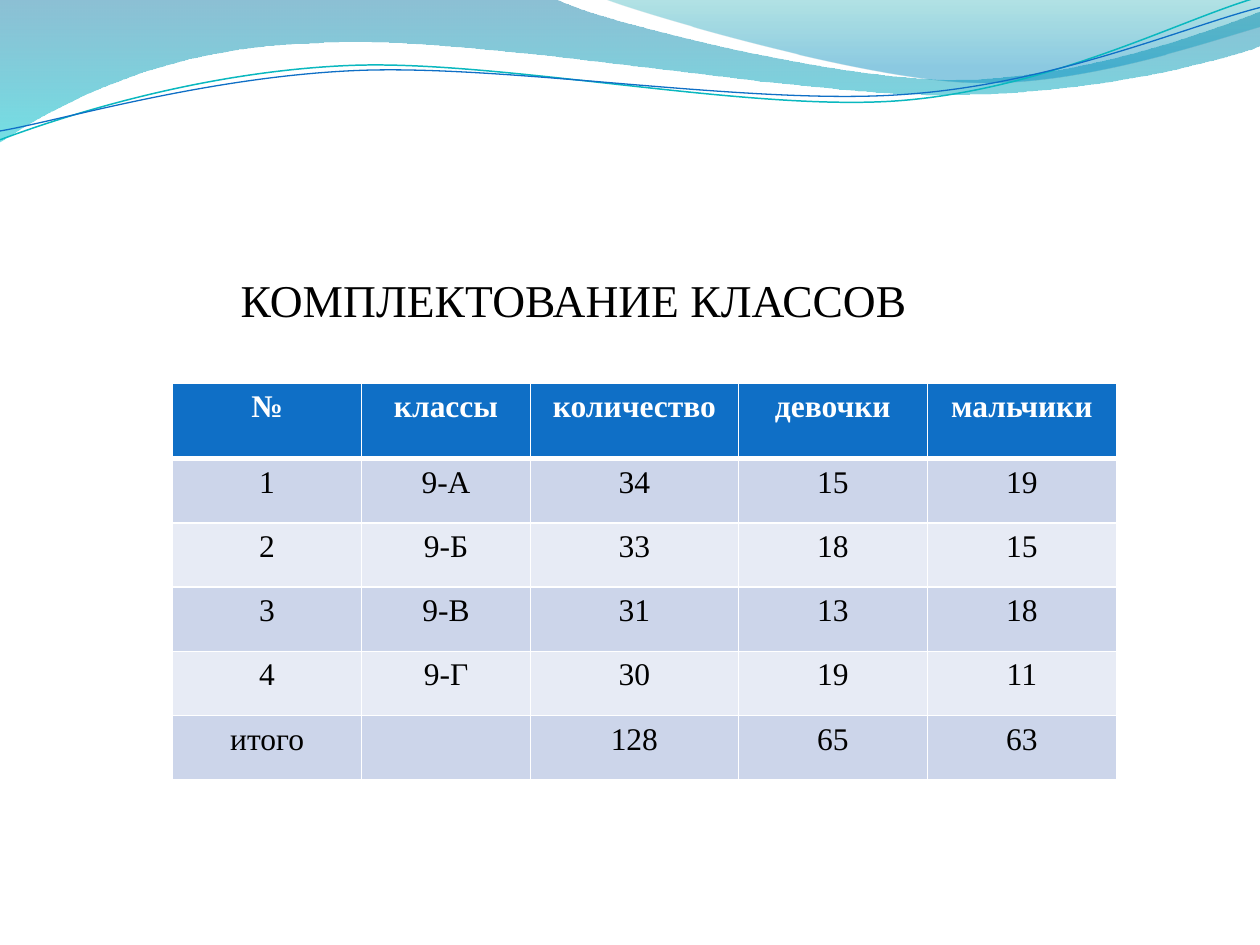
import math

from lxml import etree
from pptx import Presentation
from pptx import util as u
from pptx.dml.color import RGBColor
from pptx.enum import text
from pptx.oxml.ns import qn

COLORS = {
    "white": "FFFFFF", "black": "000000", "blue": "0F6FC6", "teal": "0AB8BF",
    "band_dark": "CCD5EA", "band_light": "E7EBF5",
    "wave_top": "0074A1", "wave_bottom": "00C6CF",
    "crest_top": "00A1A9", "crest_bottom": "008BBF",
}
FONT = "Times New Roman"

presentation = Presentation()
presentation.slide_width, presentation.slide_height = u.Inches(10), u.Inches(7.5)
slide = presentation.slides.add_slide(presentation.slide_layouts[5])


def add_wave(start, segments, closed, tilt=0, center=(0, 0)):
    """Draw an outline; a segment is a line end (2 numbers) or a cubic curve (6)."""
    cos, sin = math.cos(math.radians(tilt)), math.sin(math.radians(tilt))
    outline = []
    for segment in [start, *segments]:
        points = []
        for x, y in zip(segment[::2], segment[1::2]):
            dx, dy = x - center[0], y - center[1]
            points.append((u.Inches(center[0] + dx * cos + dy * sin),
                           u.Inches(center[1] - dx * sin + dy * cos)))
        outline.append(points)
    builder = slide.shapes.build_freeform(*outline[0][0])
    builder.add_line_segments([points[-1] for points in outline[1:]], close=closed)
    shape = builder.convert_to_shape()
    shape.shadow.inherit = False
    # Turn the straight segments that have control points into curves
    for line, points in zip(list(shape.element.iter(qn("a:lnTo"))), outline[1:]):
        if len(points) == 3:
            curve = etree.Element(qn("a:cubicBezTo"))
            for x, y in points:
                etree.SubElement(curve, qn("a:pt"),
                                 x=str(x - shape.left), y=str(y - shape.top))
            line.getparent().replace(line, curve)
    shape.rotation = tilt
    return shape


def add_run(paragraph, content, size, color, bold=False):
    run = paragraph.add_run()
    run.text = content
    run.font.name, run.font.size, run.font.bold = FONT, u.Pt(size), bold
    run.font.color.rgb = RGBColor.from_string(COLORS[color])


# Translucent waves: start, segments, gradient stops (position, colour, opacity %)
filled_waves = [
    ((0, 0),
     [(4.4, -0.01), (4.76, 0.17, 6.64, 0.63, 7.58, 0.63),
      (8.53, 0.63, 9.58, 0.26, 10, 0.09), (10.01, 0.36),
      (9.83, 0.44, 8.7, 0.76, 7.46, 0.75), (6.22, 0.75, 3.82, 0.28, 2.57, 0.34),
      (1.29, 0.36, 0.46, 0.83, -0.01, 1.13), (0, 0)],
     [(0, "wave_top", 45), (1, "wave_bottom", 55)]),
    ((4.79, -0.01),
     [(5.09, 0.11, 6.82, 0.62, 7.69, 0.65), (8.56, 0.69, 9.61, 0.32, 10, 0.21),
      (10, 0), (4.79, -0.01)],
     [(0, "crest_top", 30), (0.8, "crest_bottom", 45)]),
]
for start, segments, stops in filled_waves:
    shape = add_wave(start, segments, True)
    shape.line.fill.background()
    shape.fill.gradient()
    shape.fill.gradient_angle = 270
    for stop, (position, color, _) in zip(shape.fill.gradient_stops, stops):
        stop.position = position
        stop.color.rgb = RGBColor.from_string(COLORS[color])
    for node, (_, _, opacity) in zip(shape.element.spPr.iter(qn("a:srgbClr")), stops):
        etree.SubElement(node, qn("a:alpha"), val=str(opacity * 1000))

# Thin tilted wave lines
wave_lines = [
    ((0, 1.11),
     [(0.48, 0.93, 1.58, 0.57, 2.77, 0.52), (3.95, 0.47, 5.93, 0.89, 7.13, 0.8),
      (8.33, 0.71, 9.38, 0.15, 9.98, -0.02)], (4.99, 0.57), "teal", 0.85),
    ((0, 1.04),
     [(0.47, 0.96, 1.64, 0.61, 2.83, 0.56), (4.03, 0.51, 5.97, 0.84, 7.17, 0.75),
      (8.36, 0.67, 9.41, 0.21, 10, 0.06)], (5, 0.59), "blue", 0.75),
]
for start, segments, center, color, width in wave_lines:
    shape = add_wave(start, segments, False, -2.7, center)
    shape.fill.background()
    shape.line.color.rgb = RGBColor.from_string(COLORS[color])
    shape.line.width = u.Pt(width)

# Title
title = slide.shapes.title
title.left, title.top = u.Inches(0.5), u.Inches(2.12)
title.width, title.height = u.Inches(9), u.Inches(4.8)
frame = title.text_frame
frame.word_wrap = True
frame.auto_size = text.MSO_AUTO_SIZE.NONE
frame.vertical_anchor = text.MSO_ANCHOR.TOP
frame.margin_left, frame.margin_top = u.Inches(1.41), u.Inches(0.04)
frame.paragraphs[0].alignment = text.PP_ALIGN.LEFT
add_run(frame.paragraphs[0], "КОМПЛЕКТОВАНИЕ КЛАССОВ", 26, "black")

# Class table
rows = [
    ["№", "классы", "количество", "девочки", "мальчики"],
    ["1", "9-А", "34", "15", "19"],
    ["2", "9-Б", "33", "18", "15"],
    ["3", "9-В", "31", "13", "18"],
    ["4", "9-Г", "30", "19", "11"],
    ["итого", "", "128", "65", "63"],
]
column_widths = [1.5, 1.34, 1.65, 1.5, 1.5]
table = slide.shapes.add_table(
    len(rows), len(column_widths),
    u.Inches(1.37), u.Inches(3.04), u.Inches(7.48), u.Inches(3.15)).table
for column, width in zip(table.columns, column_widths):
    column.width = u.Inches(width)

for row_index, values in enumerate(rows):
    header = row_index == 0
    table.rows[row_index].height = u.Inches(0.6 if header else 0.51)
    band = "blue" if header else "band_dark" if row_index % 2 else "band_light"
    for column_index, value in enumerate(values):
        cell = table.cell(row_index, column_index)
        # Borders come before the fill; a thick line parts header and body
        properties = cell._tc.get_or_add_tcPr()
        for side in ("L", "R", "T", "B"):
            thick = (row_index, side) in ((0, "B"), (1, "T"))
            border = etree.SubElement(properties, qn(f"a:ln{side}"),
                                      w=str(u.Pt(3 if thick else 1)))
            solid = etree.SubElement(border, qn("a:solidFill"))
            etree.SubElement(solid, qn("a:srgbClr"), val=COLORS["white"])
        cell.fill.solid()
        cell.fill.fore_color.rgb = RGBColor.from_string(COLORS[band])
        paragraph = cell.text_frame.paragraphs[0]
        paragraph.alignment = text.PP_ALIGN.CENTER
        if value:
            add_run(paragraph, value, 18, "white" if header else "black", header)

presentation.save("out.pptx")
